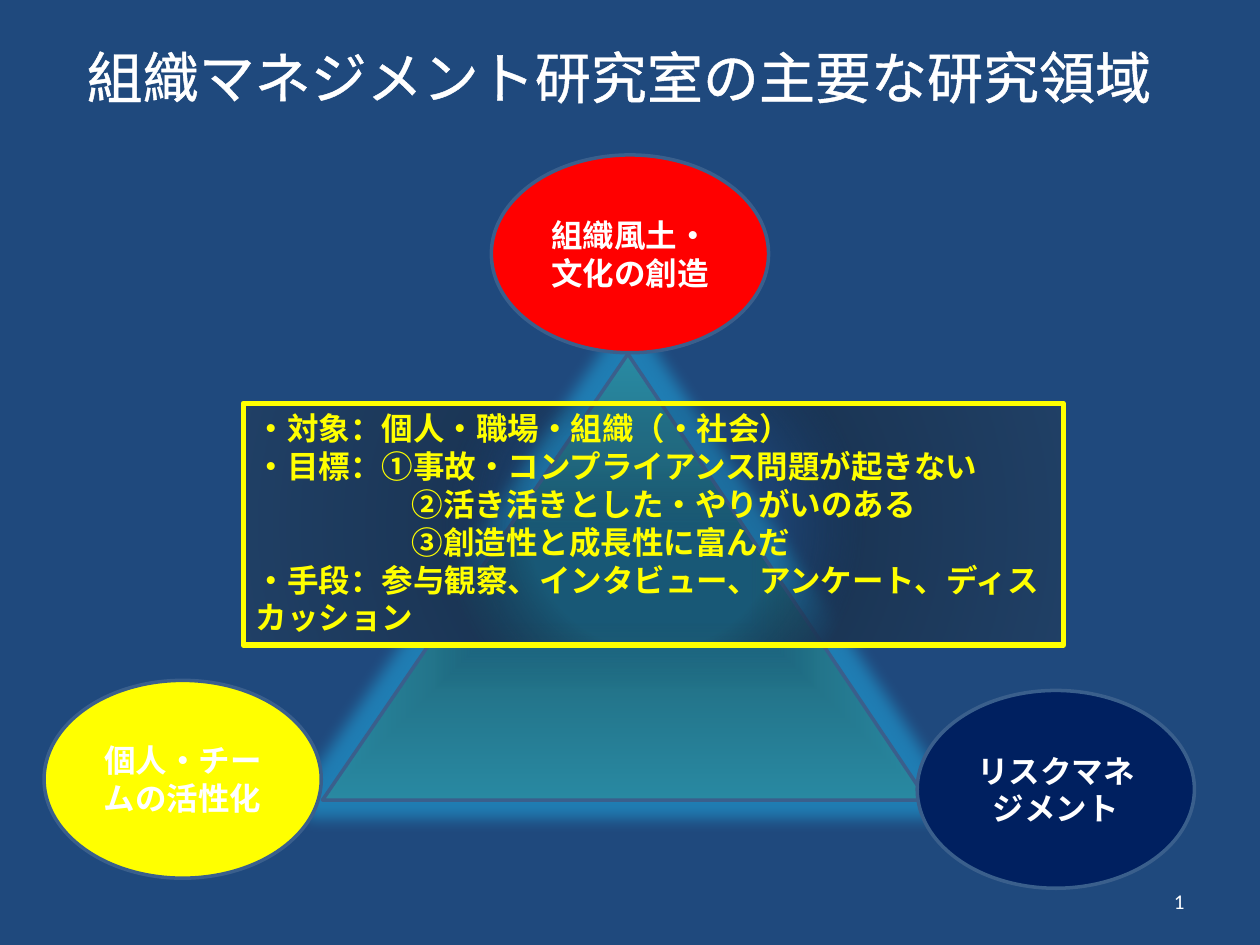
from dataclasses import dataclass

from lxml import etree
from pptx import Presentation
from pptx.dml.color import RGBColor
from pptx.enum.shapes import MSO_SHAPE
from pptx.enum.text import MSO_ANCHOR, PP_ALIGN
from pptx.oxml import parse_xml
from pptx.oxml.ns import nsdecls, qn
from pptx.util import Inches, Pt

TRIANGLE, OVAL, RECTANGLE = MSO_SHAPE.ISOSCELES_TRIANGLE, MSO_SHAPE.OVAL, MSO_SHAPE.RECTANGLE
LEFT, CENTER, RIGHT = PP_ALIGN.LEFT, PP_ALIGN.CENTER, PP_ALIGN.RIGHT
TOP, MIDDLE = MSO_ANCHOR.TOP, MSO_ANCHOR.MIDDLE


@dataclass(frozen=True)
class Theme:
    background: str = "1F497D"
    white: str = "FFFFFF"
    yellow: str = "FFFF00"
    red: str = "FF0000"
    navy: str = "002060"
    outline: str = "3A5F8C"
    glow: str = "1F7DB3"
    # Gradient stops: position %, colour, opacity %
    teal_stops: tuple = ((20, "185261", 60), (50, "23748A", 100), (100, "298AA3", 100))
    panel_stops: tuple = ((29, "13263C", 16), (50, "1B3656", 100), (100, "204066", 100))
    title_font: str = "Times New Roman"
    body_font: str = "Calibri"
    title_size: int = 32
    body_size: int = 18
    number_size: int = 12


THEME = Theme()
AREA_SIZE = (2.2, 1.57)
AREAS = [
    ("組織風土・文化の創造", THEME.red, 3.9, 1.23),
    ("リスクマネジメント", THEME.navy, 7.28, 5.48),
    ("個人・チームの活性化", THEME.yellow, 0.35, 5.4),
]
GOAL_INDENT = 1.24
SUMMARY = [
    ("・対象：個人・職場・組織（・社会）", 0),
    ("・目標：①事故・コンプライアンス問題が起きない", 0),
    ("②活き活きとした・やりがいのある", GOAL_INDENT),
    ("③創造性と成長性に富んだ", GOAL_INDENT),
    ("・手段：参与観察、インタビュー、アンケート、ディスカッション", 0),
]


def color(value):
    return RGBColor.from_string(value)


def inches(box):
    return [Inches(length) for length in box]


def add_outlined_shape(slide, kind, box, line_color, line_width):
    shape = slide.shapes.add_shape(kind, *inches(box))
    shape.shadow.inherit = False
    shape.line.color.rgb = color(line_color)
    shape.line.width = Pt(line_width)
    return shape


def set_path_gradient(shape, stops, path_kind):
    """Fill from the centre outwards."""
    stop_xml = "".join(
        f'<a:gs pos="{position * 1000}"><a:srgbClr val="{value}">'
        f'<a:alpha val="{opacity * 1000}"/></a:srgbClr></a:gs>'
        for position, value, opacity in stops
    )
    gradient = parse_xml(
        f'<a:gradFill {nsdecls("a")} rotWithShape="1"><a:gsLst>{stop_xml}</a:gsLst>'
        f'<a:path path="{path_kind}"><a:fillToRect l="50000" t="50000" r="50000" b="50000"/>'
        "</a:path></a:gradFill>"
    )
    shape._element.spPr.find(qn("a:prstGeom")).addnext(gradient)


def add_glow(shape, glow_color, radius):
    effects = shape._element.spPr.find(qn("a:effectLst"))
    glow = etree.SubElement(effects, qn("a:glow"), rad=str(Inches(radius)))
    etree.SubElement(glow, qn("a:srgbClr"), val=glow_color)


def write_text(shape, lines, size, font, text_color, bold=False,
               align=LEFT, anchor=TOP, wrap=True):
    """Write (text, left indent) lines in one style."""
    frame = shape.text_frame
    frame.word_wrap = wrap
    frame.vertical_anchor = anchor
    frame.text = "\n".join(text for text, _ in lines)
    for paragraph, (_, indent) in zip(frame.paragraphs, lines):
        paragraph.alignment = align
        if indent:
            paragraph._p.get_or_add_pPr().set("marL", str(Inches(indent)))
        for run in paragraph.runs:
            run.font.size = Pt(size)
            run.font.name = font
            run.font.bold = bold
            run.font.color.rgb = color(text_color)


def add_title(slide, box, text):
    title = slide.shapes.add_textbox(*inches(box))
    write_text(title, [(text, 0)], THEME.title_size, THEME.title_font, THEME.white, wrap=False)
    properties = title.text_frame.paragraphs[0].runs[0].font._element
    properties.insert(0, parse_xml(
        f'<a:ln {nsdecls("a")} w="{Pt(1.45)}"><a:solidFill>'
        f'<a:srgbClr val="{THEME.white}"/></a:solidFill></a:ln>'
    ))


def add_triangle(slide, box):
    triangle = add_outlined_shape(slide, TRIANGLE, box, THEME.outline, 2)
    triangle.adjustments[0] = 0.505
    set_path_gradient(triangle, THEME.teal_stops, "shape")
    add_glow(triangle, THEME.glow, 0.25)


def add_area(slide, box, text, fill_color):
    area = add_outlined_shape(slide, OVAL, box, THEME.outline, 2)
    area.fill.solid()
    area.fill.fore_color.rgb = color(fill_color)
    write_text(area, [(text, 0)], THEME.body_size, THEME.body_font, THEME.white,
               bold=True, align=CENTER, anchor=MIDDLE)


def add_summary(slide, box, lines):
    panel = add_outlined_shape(slide, RECTANGLE, box, THEME.yellow, 3)
    set_path_gradient(panel, THEME.panel_stops, "circle")
    write_text(panel, lines, THEME.body_size, THEME.body_font, THEME.yellow, bold=True)


def add_page_number(slide, box, text):
    number = slide.shapes.add_textbox(*inches(box))
    write_text(number, [(text, 0)], THEME.number_size, THEME.body_font, THEME.white,
               align=RIGHT, anchor=MIDDLE)


def main():
    presentation = Presentation()
    presentation.slide_width, presentation.slide_height = Inches(10), Inches(7.5)
    slide = presentation.slides.add_slide(presentation.slide_layouts[6])
    slide.background.fill.solid()
    slide.background.fill.fore_color.rgb = color(THEME.background)

    # Triangle and title
    add_triangle(slide, (2.56, 2.81, 4.8, 3.54))
    add_title(slide, (0.59, 0.29, 8.73, 0.64), "組織マネジメント研究室の主要な研究領域")

    # Research areas at the corners
    for text, fill_color, left, top in AREAS:
        add_area(slide, (left, top, *AREA_SIZE), text, fill_color)

    # Summary panel and page number
    add_summary(slide, (1.93, 3.2, 6.51, 1.92), SUMMARY)
    add_page_number(slide, (7.17, 6.95, 2.33, 0.4), "1")

    presentation.save("out.pptx")


if __name__ == "__main__":
    main()
